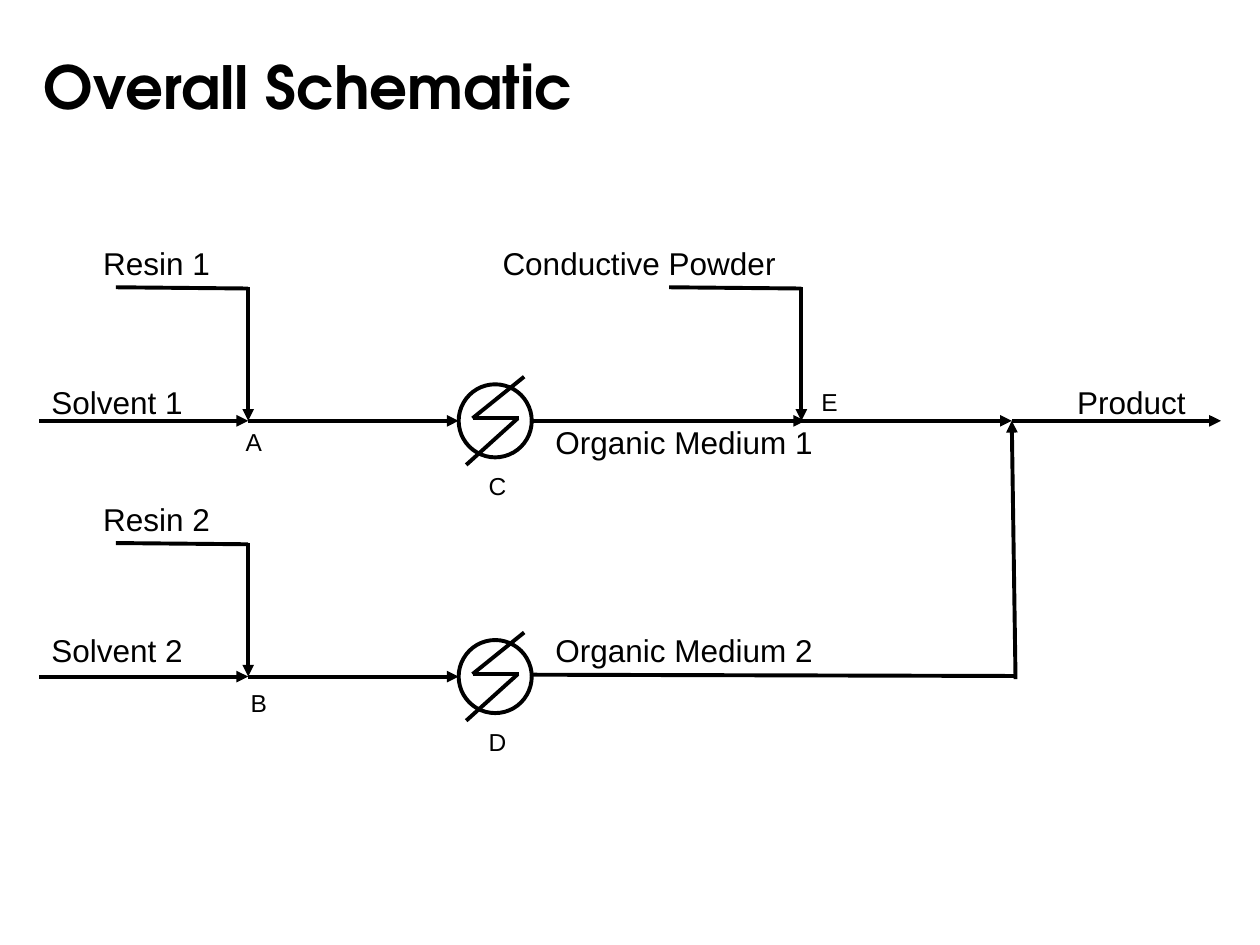
from dataclasses import dataclass

from lxml import etree
from pptx import Presentation
from pptx.dml.color import RGBColor
from pptx.enum.shapes import MSO_CONNECTOR, MSO_SHAPE
from pptx.enum.text import MSO_ANCHOR
from pptx.oxml.ns import qn
from pptx.util import Inches, Pt


@dataclass(frozen=True)
class Theme:
    ink: RGBColor = RGBColor(0, 0, 0)
    paper: RGBColor = RGBColor(255, 255, 255)
    title_font: str = "TeX Gyre Adventor"
    label_font: str = "Arial"
    title_size: int = 34
    label_size: int = 18
    point_size: int = 14
    line_width: float = 2.25


theme = Theme()
deck = Presentation()
deck.slide_width, deck.slide_height = Inches(10), Inches(7.5)
slide = deck.slides.add_slide(deck.slide_layouts[6])
slide.background.fill.solid()
slide.background.fill.fore_color.rgb = theme.paper

# Grid of 100 columns by 75 rows; all lengths below are counted in it.
COL, ROW = deck.slide_width / 100, deck.slide_height / 75


def write(text, *, left, top, width, height=3.6,
          size=theme.label_size, font=theme.label_font, bold=False):
    box = slide.shapes.add_textbox(
        round(left * COL), round(top * ROW), round(width * COL), round(height * ROW))
    frame = box.text_frame
    frame.word_wrap = True
    frame.vertical_anchor = MSO_ANCHOR.TOP
    frame.margin_left = frame.margin_right = round(COL)
    frame.margin_top = frame.margin_bottom = round(ROW)
    run = frame.paragraphs[0].add_run()
    run.text = text
    run.font.name, run.font.size, run.font.bold = font, Pt(size), bold
    run.font.color.rgb = theme.ink


def pipe(start, end, arrow=False, parent=slide):
    """Draw a line between two grid points, with an optional arrowhead at end."""
    line = parent.shapes.add_connector(
        MSO_CONNECTOR.STRAIGHT,
        round(start[0] * COL), round(start[1] * ROW),
        round(end[0] * COL), round(end[1] * ROW))
    line.line.color.rgb = theme.ink
    line.line.width = Pt(theme.line_width)
    properties = line._element.spPr
    if arrow:
        etree.SubElement(properties.find(qn("a:ln")), qn("a:tailEnd"), type="triangle")
    etree.SubElement(properties, qn("a:effectLst"))


write("Overall Schematic", left=2.5, top=3, width=86.7, height=12.5,
      size=theme.title_size, font=theme.title_font, bold=True)

# Stations along the flow, and the height of its two streams
inlet, mixer, exchanger, powder, junction, outlet = 3.1, 19.7, 36.4, 63.6, 80.3, 96.9
streams = (33.4, 53.7)
main_stream, second_stream = streams
drop = 10.6
diameter = 5.8
exchanger_end = exchanger + diameter

# Each stream: solvent meets resin, then passes the heat exchanger
for flow in streams:
    pipe((inlet, flow), (mixer, flow), arrow=True)
    pipe((mixer, flow - drop), (mixer, flow), arrow=True)
    pipe((mixer, flow), (exchanger, flow), arrow=True)
    pipe((mixer, flow - drop + 0.1), (9.2, flow - drop))

    vessel = slide.shapes.add_shape(
        MSO_SHAPE.OVAL, round(exchanger * COL), round((flow - diameter / 2) * ROW),
        round(diameter * COL), round(diameter * ROW))
    vessel.shadow.inherit = False
    vessel.fill.background()
    vessel.line.color.rgb = theme.ink
    vessel.line.width = Pt(theme.line_width)

    coil = slide.shapes.add_group_shape()
    bend = flow - 0.2
    pipe((37.5, bend), (41.6, flow - 3.5), parent=coil)
    pipe((37.5, bend), (41.2, bend), parent=coil)
    pipe((41.1, bend), (37, flow + 3.5), parent=coil)

# Powder joins the first stream; the second stream rises to the junction
pipe((exchanger_end, main_stream), (63.9, main_stream), arrow=True)
pipe((powder, main_stream - drop), (powder, main_stream), arrow=True)
pipe((powder, main_stream - drop + 0.1), (53.1, main_stream - drop))
pipe((powder, main_stream), (junction, main_stream), arrow=True)
pipe((80.6, 53.9), (junction, main_stream), arrow=True)
pipe((80.5, 53.65), (exchanger_end, 53.55))
pipe((junction, main_stream), (outlet, main_stream), arrow=True)

for label, left, top, width in (
    ("Resin 1", 7.2, 18.4, 11.7),
    ("Resin 2", 7.2, 38.7, 11.7),
    ("Solvent 1", inlet, 29.4, 13.1),
    ("Solvent 2", inlet, 49.1, 13.1),
    ("Organic Medium 2", 43.1, 49.1, 24.2),
    ("Organic Medium 1", 43.1, 32.6, 24.2),
    ("Conductive Powder", 38.9, 18.4, 24.7),
    ("Product", 84.5, 29.4, 11.7),
):
    write(label, left=left, top=top, width=width)

for point, left, top in (
    ("A", 18.5, 32.9),
    ("B", 18.9, 53.6),
    ("C", 37.8, 36.4),
    ("D", 37.8, 56.7),
    ("E", 64.2, 29.7),
):
    write(point, left=left, top=top, width=3.1, height=3.1, size=theme.point_size)

deck.save("out.pptx")
